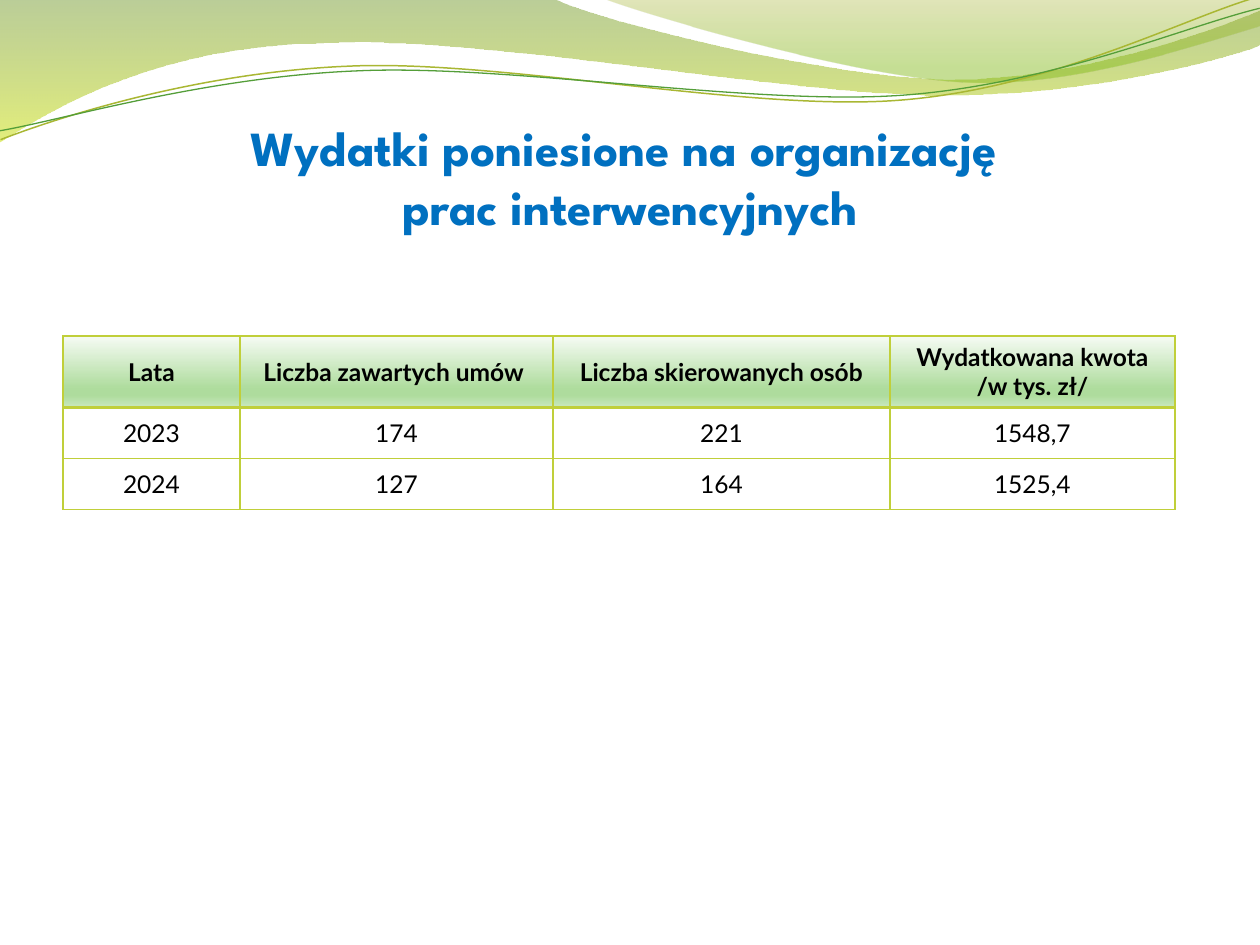
from dataclasses import dataclass

from lxml import etree
from pptx import Presentation
from pptx.dml.color import RGBColor
from pptx.enum.text import MSO_ANCHOR, MSO_AUTO_SIZE, PP_ALIGN
from pptx.oxml.ns import qn
from pptx.util import Pt

PX = 914400 / 126
TILT = -2.7
MID = MSO_ANCHOR.MIDDLE
LOW = MSO_ANCHOR.BOTTOM
FIXED = MSO_AUTO_SIZE.NONE
CENTER = PP_ALIGN.CENTER


@dataclass(frozen=True)
class Theme:
    head: str = "0070C0"
    ink: str = "000000"
    edge: str = "C0CF3A"
    olive: str = "A9B733"
    green: str = "549E39"
    wave: tuple = ((0, "69921C", 45), (100, "CCE10F", 55))
    veil: tuple = ((0, "9BAA1A", 30), (80, "81BA16", 45))
    top: tuple = ((0, "F6FBF4", 100), (74, "AEDC9D", 100),
                  (83, "AEDC9D", 100), (100, "C9E8BE", 100))
    title_font: str = "League Spartan"
    body_font: str = "Lato"
    title_size: int = 28
    body_size: int = 14


THEME = Theme()

WAVE = ((0, 0), [
    (554, -1),
    (598, 21, 835, 79, 955, 79),
    (1075, 79, 1207, 33, 1260, 11),
    (1261, 45),
    (1239, 55, 1095, 96, 940, 95),
    (784, 95, 480, 35, 324, 43),
    (163, 45, 58, 105, -1, 142),
    (0, 0),
])
VEIL = ((604, -1), [
    (641, 14, 859, 78, 968, 82),
    (1077, 87, 1211, 40, 1260, 26),
    (1260, 0),
    (604, -1),
])
UPPER = ((-2, 110), [
    (58, 90, 198, 52, 349, 53),
    (499, 53, 744, 117, 895, 113),
    (1049, 109, 1184, 45, 1259, 27),
])
LOWER = ((-2, 101), [
    (57, 94, 205, 57, 357, 58),
    (508, 58, 750, 112, 902, 108),
    (1052, 104, 1188, 52, 1262, 38),
])

COLS = (177, 313, 337, 285)
ROW = 51
DATA = (
    ("Lata", "Liczba zawartych umów ", "Liczba skierowanych osób",
     "Wydatkowana kwota\n/w tys. zł/"),
    ("2023", "174", "221", "1548,7"),
    ("2024", "127", "164", "1525,4"),
)


def px(n):
    return round(n * PX)


def rgb(code):
    return RGBColor.from_string(code)


def write(frame, text, font=THEME.body_font, size=THEME.body_size,
          color=THEME.ink, bold=False):
    frame.text = text
    for para in frame.paragraphs:
        para.alignment = CENTER
        for run in para.runs:
            run.font.name = font
            run.font.size = Pt(size)
            run.font.bold = bold
            run.font.color.rgb = rgb(color)


def shade(fill, owner, stops):
    fill.gradient()
    fill.gradient_angle = 270
    group = next(owner.iter(qn("a:gsLst")))
    for old in list(group):
        group.remove(old)
    for pos, code, alpha in stops:
        stop = etree.SubElement(group, qn("a:gs"), pos=str(pos * 1000))
        color = etree.SubElement(stop, qn("a:srgbClr"), val=code)
        if alpha < 100:
            etree.SubElement(color, qn("a:alpha"), val=str(alpha * 1000))


def bend(shape, parts):
    lines = list(shape.element.iter(qn("a:lnTo")))
    for line, part in zip(lines, parts):
        if len(part) == 2:
            continue
        arc = etree.Element(qn("a:cubicBezTo"))
        for x, y in zip(part[::2], part[1::2]):
            etree.SubElement(arc, qn("a:pt"), x=str(px(x) - shape.left),
                             y=str(px(y) - shape.top))
        line.getparent().replace(line, arc)


def curve(slide, form, close):
    start, parts = form
    pen = slide.shapes.build_freeform(px(start[0]), px(start[1]))
    pen.add_line_segments(
        [(px(part[-2]), px(part[-1])) for part in parts], close=close)
    shape = pen.convert_to_shape()
    bend(shape, parts)
    shape.shadow.inherit = False
    return shape


def add_wave(slide, form, stops):
    shape = curve(slide, form, True)
    shade(shape.fill, shape.element, stops)
    shape.line.fill.background()


def add_line(slide, form, color, width):
    shape = curve(slide, form, False)
    shape.rotation = TILT
    shape.fill.background()
    shape.line.color.rgb = rgb(color)
    shape.line.width = Pt(width)


def set_title(slide, text):
    title = slide.shapes.title
    title.left, title.top = px(63), px(77)
    title.width, title.height = px(1134), px(158)
    frame = title.text_frame
    frame.word_wrap = True
    frame.auto_size = FIXED
    frame.vertical_anchor = LOW
    frame.margin_left = frame.margin_right = frame.margin_bottom = 0
    frame.margin_top = px(6)
    write(frame, text, font=THEME.title_font, size=THEME.title_size,
          color=THEME.head, bold=True)
    slide.shapes.element.append(title.element)


def add_edges(cell, widths):
    props = cell._tc.get_or_add_tcPr()
    for side, width in widths.items():
        line = etree.SubElement(props, qn(f"a:ln{side}"), w=str(Pt(width)))
        fill = etree.SubElement(line, qn("a:solidFill"))
        etree.SubElement(fill, qn("a:srgbClr"), val=THEME.edge)


def add_grid(slide):
    holder = slide.shapes.add_table(
        len(DATA), len(COLS), px(63), px(336), px(sum(COLS)), px(174))
    table = holder.table
    table.first_row = table.horz_banding = False
    for col, width in zip(table.columns, COLS):
        col.width = px(width)
    for r, texts in enumerate(DATA):
        table.rows[r].height = px(ROW)
        for c, text in enumerate(texts):
            cell = table.cell(r, c)
            cell.vertical_anchor = MID
            write(cell.text_frame, text, bold=r == 0)
            add_edges(cell, {"L": 1, "R": 1, "T": 2 if r == 1 else 1,
                             "B": 2 if r == 0 else 1})
            if r == 0:
                shade(cell.fill, cell._tc, THEME.top)
            else:
                cell.fill.background()
    holder.height = px(174)


def main():
    deck = Presentation()
    deck.slide_width, deck.slide_height = px(1260), px(945)
    slide = deck.slides.add_slide(deck.slide_layouts[5])
    add_wave(slide, WAVE, THEME.wave)
    add_wave(slide, VEIL, THEME.veil)
    add_line(slide, UPPER, THEME.olive, 0.85)
    add_line(slide, LOWER, THEME.green, 0.75)
    set_title(slide, "Wydatki poniesione na organizację \vprac interwencyjnych")
    add_grid(slide)
    deck.save("out.pptx")


if __name__ == "__main__":
    main()
